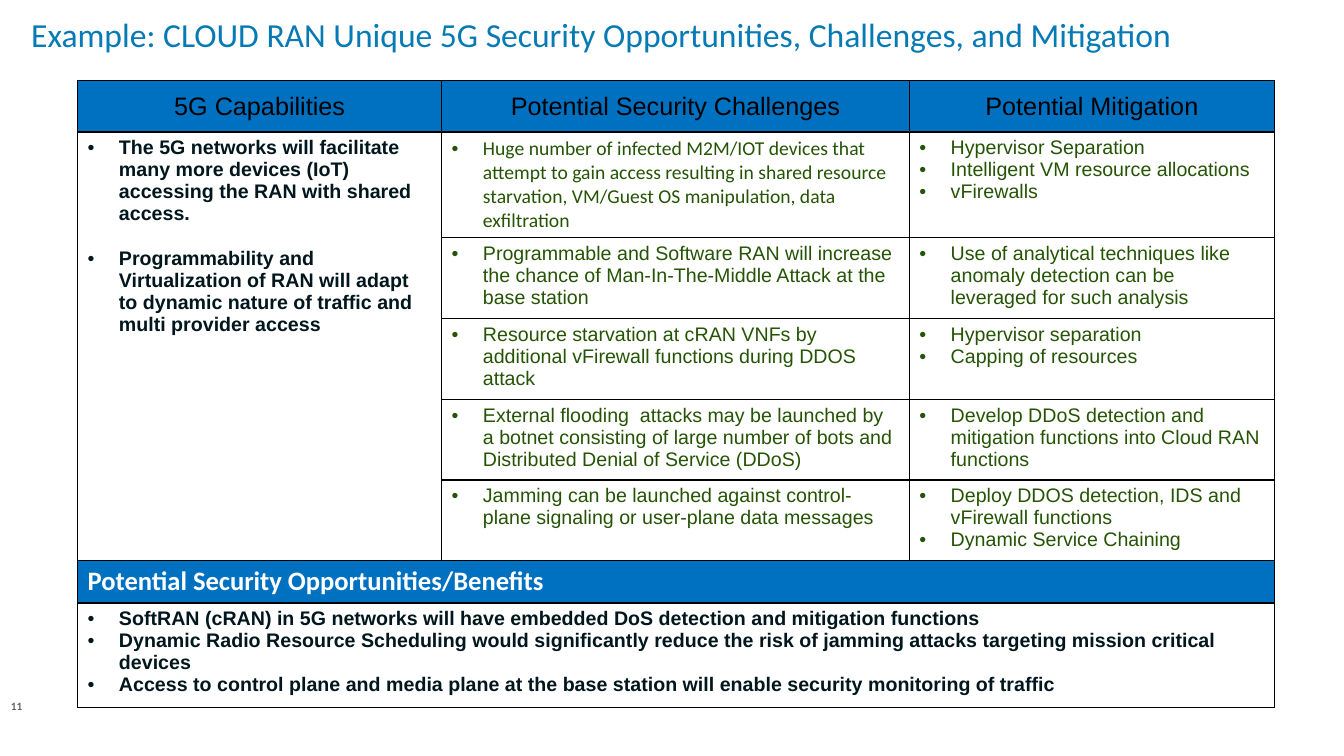
from lxml import etree
from pptx import Presentation
from pptx.dml.color import RGBColor
from pptx.enum.text import MSO_ANCHOR, PP_ALIGN
from pptx.oxml.ns import qn
from pptx.util import Inches, Pt

CENTER, LEFT = PP_ALIGN.CENTER, PP_ALIGN.LEFT
MIDDLE, TOP = MSO_ANCHOR.MIDDLE, MSO_ANCHOR.TOP
BLUE, BLACK, WHITE = "0070C0", "000000", "FFFFFF"
NAVY, GREEN, TITLE_BLUE, GREY = "01161D", "255405", "067AB4", "666666"

TITLE = "Example: CLOUD RAN Unique 5G Security Opportunities, Challenges, and Mitigation"
PAGE_NUMBER = "11"
HEADERS = ["5G Capabilities", "Potential Security Challenges", "Potential Mitigation"]
CAPABILITIES = [
    "The 5G networks will facilitate many more devices (IoT) accessing the RAN with shared access.",
    "Programmability and Virtualization of RAN will adapt to dynamic nature of traffic and multi provider access",
]
THREATS = [
    ("Huge number of infected M2M/IOT devices that attempt to gain access resulting in shared resource starvation, VM/Guest OS manipulation, data exfiltration",
     ["Hypervisor Separation", "Intelligent VM resource allocations", "vFirewalls"]),
    ("Programmable and Software RAN will increase the chance of Man-In-The-Middle Attack at the base station",
     ["Use of analytical techniques like anomaly detection can be leveraged for such analysis"]),
    ("Resource starvation at cRAN VNFs by additional vFirewall functions during DDOS attack",
     ["Hypervisor separation", "Capping of resources"]),
    ("External flooding  attacks may be launched by a botnet consisting of large number of bots and Distributed Denial of Service (DDoS)",
     ["Develop DDoS detection and mitigation functions into Cloud RAN functions"]),
    ("Jamming can be launched against control-plane signaling or user-plane data messages",
     ["Deploy DDOS detection, IDS and vFirewall functions", "Dynamic Service Chaining"]),
]
BENEFITS_HEADING = "Potential Security Opportunities/Benefits"
BENEFITS = [
    "SoftRAN (cRAN) in 5G networks will have embedded DoS detection and mitigation functions",
    "Dynamic Radio Resource Scheduling would significantly reduce the risk of jamming attacks targeting mission critical devices",
    "Access to control plane and media plane at the base station will enable security monitoring of traffic",
]
COLUMN_WIDTHS = [3.61, 4.64, 3.62]
ROW_HEIGHTS = [0.51, 1.05, 0.8, 0.75, 0.8, 0.8, 0.42, 0.97]


def color(value):
    return RGBColor.from_string(value)


def add_bullet(para, ink):
    props = para._p.get_or_add_pPr()
    props.set("marL", str(Inches(0.31)))
    props.set("indent", str(-Inches(0.31)))
    bullet_color = etree.SubElement(props, qn("a:buClr"))
    etree.SubElement(bullet_color, qn("a:srgbClr"), val=ink)
    etree.SubElement(props, qn("a:buFont"), typeface="Arial")
    etree.SubElement(props, qn("a:buChar"), char="•")


def write(frame, lines, size, ink, font="Arial", bold=False, align=LEFT, bullets=False, gap=0):
    frame.text = "\n".join(lines)
    for index, para in enumerate(frame.paragraphs):
        para.alignment = align
        if index and gap:
            para.space_before = Pt(gap)
        if bullets:
            add_bullet(para, ink)
        for span in para.runs:
            span.font.size = Pt(size)
            span.font.name = font
            span.font.bold = bold
            span.font.color.rgb = color(ink)


def add_text(page, place, text, size, ink, inset_x=0, inset_y=0, bold=False):
    box = page.shapes.add_textbox(*[Inches(value) for value in place])
    frame = box.text_frame
    frame.word_wrap = True
    frame.margin_left = frame.margin_right = Inches(inset_x)
    frame.margin_top = frame.margin_bottom = Inches(inset_y)
    write(frame, [text], size, ink, "Calibri", bold)


def style_cell(cell, fill):
    props = cell._tc.get_or_add_tcPr()
    for side in ("a:lnL", "a:lnR", "a:lnT", "a:lnB"):
        line = etree.SubElement(props, qn(side), w=str(Pt(1)))
        line_fill = etree.SubElement(line, qn("a:solidFill"))
        etree.SubElement(line_fill, qn("a:srgbClr"), val=BLACK)
    cell.fill.solid()
    cell.fill.fore_color.rgb = color(fill)
    cell.margin_left = cell.margin_right = Inches(0.1)
    cell.margin_top = cell.margin_bottom = Inches(0.05)
    cell.vertical_anchor = TOP


def add_security_table(page):
    frame = page.shapes.add_table(
        len(ROW_HEIGHTS), len(COLUMN_WIDTHS), Inches(0.77), Inches(0.8),
        Inches(sum(COLUMN_WIDTHS)), Inches(sum(ROW_HEIGHTS)))
    table = frame.table
    table.first_row = table.horz_banding = False
    for column, width in zip(table.columns, COLUMN_WIDTHS):
        column.width = Inches(width)
    for row, height in zip(table.rows, ROW_HEIGHTS):
        row.height = Inches(height)

    heading_row = len(THREATS) + 1
    benefits_row = heading_row + 1
    for row_index, row in enumerate(table.rows):
        for cell in row.cells:
            style_cell(cell, BLUE if row_index in (0, heading_row) else WHITE)
    table.cell(1, 0).merge(table.cell(len(THREATS), 0))
    for row_index in (heading_row, benefits_row):
        table.cell(row_index, 0).merge(table.cell(row_index, 2))

    for index, header in enumerate(HEADERS):
        cell = table.cell(0, index)
        cell.vertical_anchor = MIDDLE
        write(cell.text_frame, [header], 18, BLACK, align=CENTER)
    write(table.cell(1, 0).text_frame, CAPABILITIES, 14, NAVY, bold=True, bullets=True, gap=16)
    for index, (challenge, mitigations) in enumerate(THREATS, 1):
        font = "Calibri" if index == 1 else "Arial"
        write(table.cell(index, 1).text_frame, [challenge], 14, GREEN, font, bullets=True)
        write(table.cell(index, 2).text_frame, mitigations, 14, GREEN, bullets=True)
    write(table.cell(heading_row, 0).text_frame, [BENEFITS_HEADING], 19, WHITE, "Calibri", bold=True)
    write(table.cell(benefits_row, 0).text_frame, BENEFITS, 14, NAVY, bold=True, bullets=True)


def main():
    deck = Presentation()
    deck.slide_width, deck.slide_height = Inches(13.33), Inches(7.5)
    page = deck.slides.add_slide(deck.slide_layouts[6])
    add_text(page, (0.31, 0.14, 12.74, 0.57), TITLE, 24, TITLE_BLUE)
    add_text(page, (0.01, 6.89, 0.49, 0.4), PAGE_NUMBER, 8, GREY, 0.1, 0.05, bold=True)
    add_security_table(page)
    deck.save("out.pptx")


if __name__ == "__main__":
    main()
